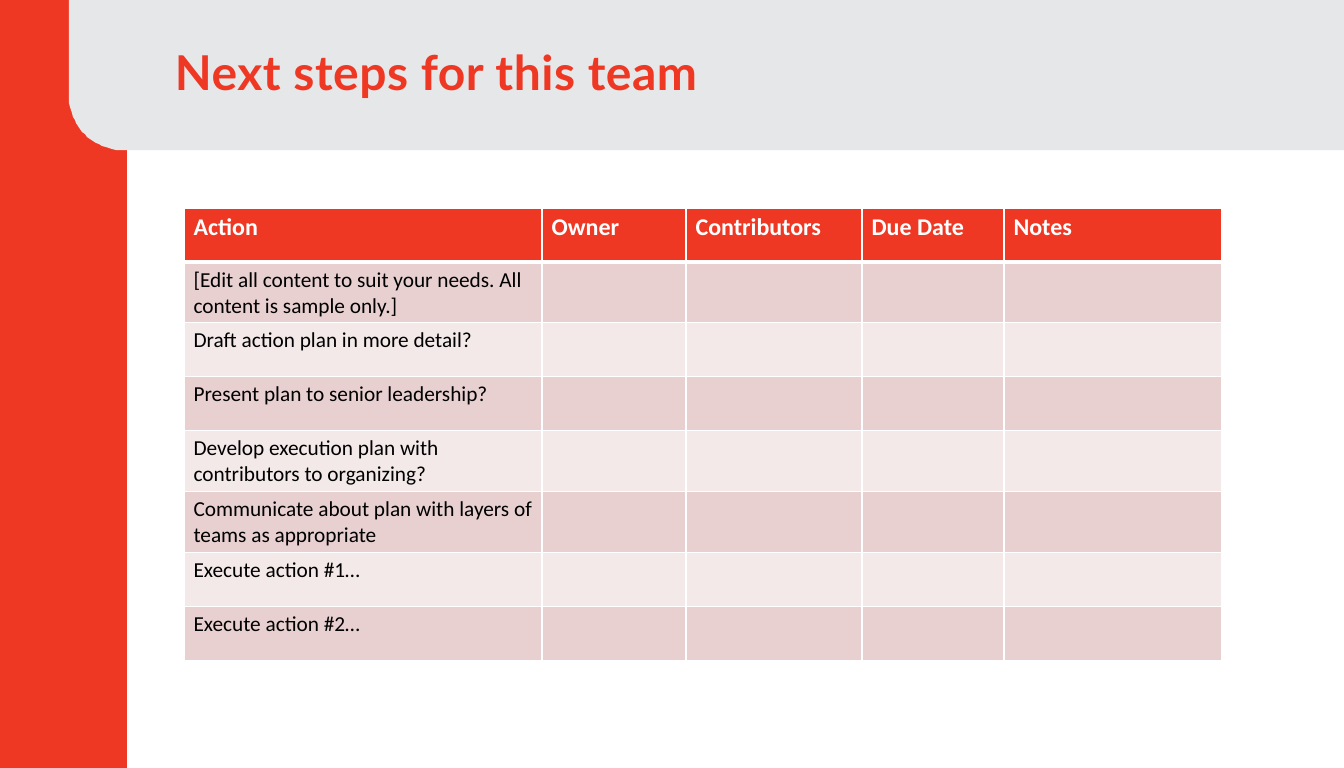
from math import cos, pi, sin

from lxml import etree
from pptx import Presentation
from pptx.dml.color import RGBColor
from pptx.enum.text import MSO_ANCHOR
from pptx.oxml.ns import qn
from pptx.util import Emu, Pt

TOP = MSO_ANCHOR.TOP
PX = 9525
RED, GREY, WHITE, BLACK = "EF3824", "E6E7E8", "FFFFFF", "000000"
BANDS = ("E8D0D0", "F4E9E9")
COLUMNS = {"Action": 358, "Owner": 144, "Contributors": 176, "Due Date": 142, "Notes": 218}
ROW_HEIGHT = 54
ACTIONS = [
    "[Edit all content to suit your needs. All content is sample only.]",
    "Draft action plan in more detail?",
    "Present plan to senior leadership?",
    "Develop execution plan with contributors to organizing?",
    "Communicate about plan with layers of teams as appropriate",
    "Execute action #1…",
    "Execute action #2…",
]


def px(n):
    """Turn pixels into EMU."""
    return Emu(round(n * PX))


def rgb(color):
    """Turn a hex string into a colour."""
    return RGBColor.from_string(color)


def add_outline(s, points, color):
    """Draw a closed, filled outline through points in px."""
    builder = s.shapes.build_freeform(*points[0], scale=PX)
    builder.add_line_segments(points[1:], close=True)
    sp = builder.convert_to_shape()
    sp.shadow.inherit = False
    sp.fill.solid()
    sp.fill.fore_color.rgb = rgb(color)
    sp.line.fill.background()


def write(tf, text, size=16, color=BLACK, bold=False, font="Calibri", spacing=None, before=0):
    """Write one formatted paragraph into a text frame."""
    p = tf.paragraphs[0]
    p.space_before = Pt(before)
    r = p.add_run()
    r.text = text
    r.font.size, r.font.bold, r.font.name = Pt(size), bold, font
    r.font.color.rgb = rgb(color)
    if spacing is not None:
        r._r.get_or_add_rPr().set("spc", str(round(spacing * 100)))


def add_title(s, text):
    """Add the slide title in the banner."""
    tf = s.shapes.add_textbox(px(174), px(41), px(882), px(60)).text_frame
    tf.word_wrap = True
    tf.vertical_anchor = TOP
    tf.margin_left = px(1)
    tf.margin_top = px(2)
    tf.margin_right = tf.margin_bottom = 0
    write(tf, text, size=36, color=RED, bold=True, font="Lato", spacing=0.4, before=1.1)


def style_cell(cell, color, top=1, bottom=1):
    """Give a cell white borders and a fill."""
    tcPr = cell._tc.get_or_add_tcPr()
    for side, width in (("L", 1), ("R", 1), ("T", top), ("B", bottom)):
        ln = etree.SubElement(tcPr, qn(f"a:ln{side}"), w=str(Pt(width)))
        fill = etree.SubElement(ln, qn("a:solidFill"))
        etree.SubElement(fill, qn("a:srgbClr"), val=WHITE)
    cell.fill.solid()
    cell.fill.fore_color.rgb = rgb(color)


def add_action_table(s):
    """Add the table of actions under a red header row."""
    count = len(ACTIONS) + 1
    table = s.shapes.add_table(count, len(COLUMNS), px(184), px(208),
                               px(sum(COLUMNS.values())), px(ROW_HEIGHT * count)).table
    for row in table.rows:
        row.height = px(ROW_HEIGHT)
    for i, (name, width) in enumerate(COLUMNS.items()):
        table.columns[i].width = px(width)
        style_cell(table.cell(0, i), RED, bottom=3)
        write(table.cell(0, i).text_frame, name, size=18, color=WHITE, bold=True)
    for j, action in enumerate(ACTIONS, 1):
        for i in range(len(COLUMNS)):
            style_cell(table.cell(j, i), BANDS[(j - 1) % 2], top=3 if j == 1 else 1)
        write(table.cell(j, 0).text_frame, action)


def banner_points(left, right, bottom, radius, steps=24):
    """Outline a banner whose lower left corner is round."""
    angles = [pi / 2 * i / steps for i in range(steps + 1)]
    corner = [(left + radius * (1 - cos(a)), bottom - radius * (1 - sin(a))) for a in angles]
    return [(right, 0), (left, 0), *corner, (right, bottom)]


def main():
    """Build the slide and save it."""
    prs = Presentation()
    prs.slide_width, prs.slide_height = px(1344), px(768)
    s = prs.slides.add_slide(prs.slide_layouts[6])
    add_outline(s, [(0, 0), (127, 0), (127, 768), (0, 768)], RED)
    add_outline(s, banner_points(69, 1344, 150, 54), GREY)
    add_title(s, "Next steps for this team")
    add_action_table(s)
    prs.save("out.pptx")


if __name__ == "__main__":
    main()
